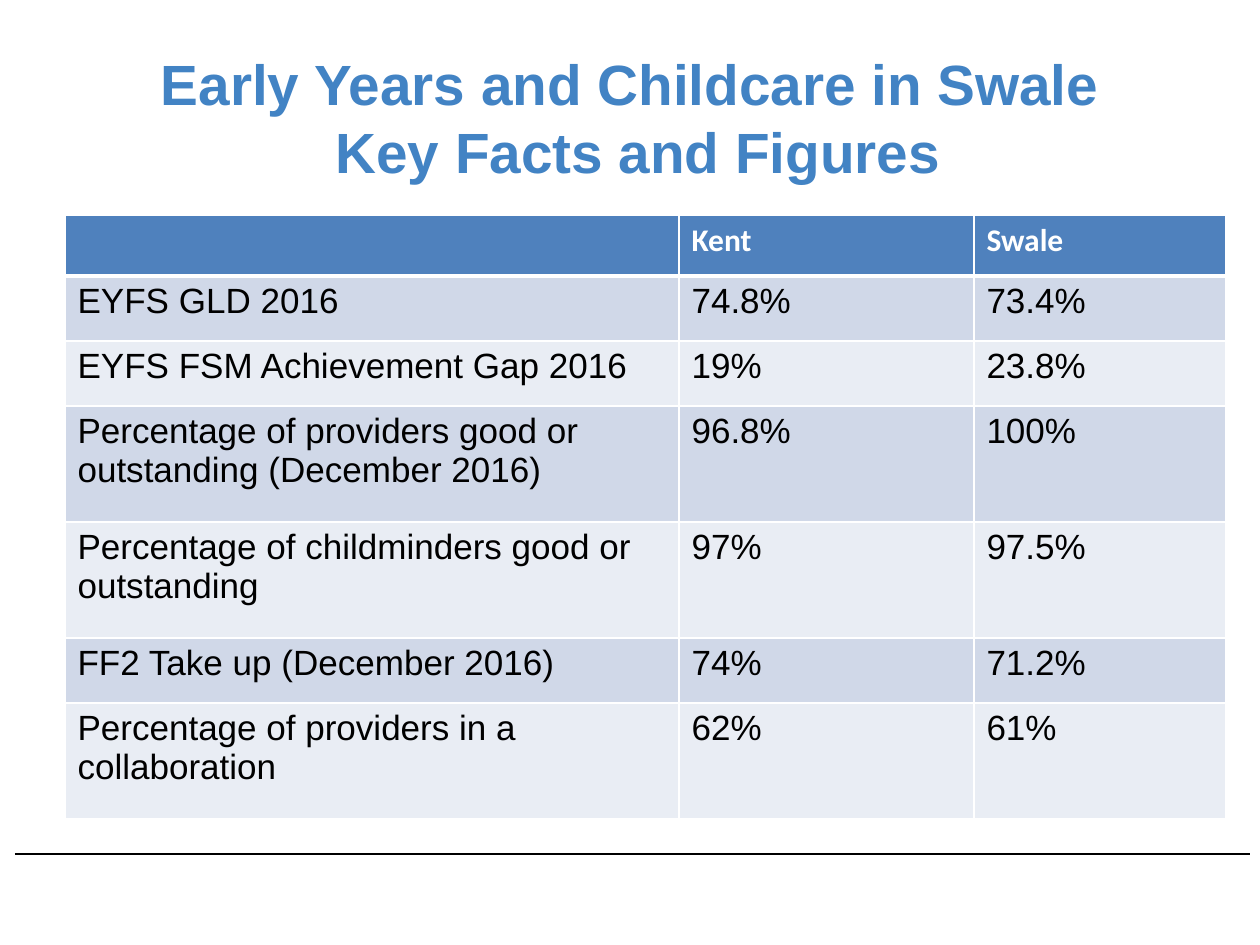
from lxml.etree import SubElement
from pptx import Presentation
from pptx.dml.color import RGBColor
from pptx.enum.shapes import MSO_CONNECTOR
from pptx.enum.text import MSO_ANCHOR, MSO_AUTO_SIZE, PP_ALIGN
from pptx.oxml.ns import qn
from pptx.util import Emu, Pt

SCALE = 914400 / 126  # EMU per px

BLACK = RGBColor(0x00, 0x00, 0x00)
WHITE = RGBColor(0xFF, 0xFF, 0xFF)
TITLE = RGBColor(0x42, 0x83, 0xC4)
HEADER = RGBColor(0x4F, 0x81, 0xBD)
BANDS = RGBColor(0xE9, 0xED, 0xF4), RGBColor(0xD0, 0xD8, 0xE8)

TITLE_FONT = {"name": "Arial", "size": Pt(32.4), "bold": True}
HEAD_FONT = {"name": "Calibri", "size": Pt(18), "bold": True}
BODY_FONT = {"name": "Arial", "size": Pt(20), "bold": False}

COLS = [614, 295, 252]
ROWS = [61, 65, 65, 116, 116, 65, 116]
FACTS = [
    ("", "Kent", "Swale"),
    ("EYFS GLD 2016", "74.8%", "73.4%"),
    ("EYFS FSM Achievement Gap 2016", "19%", "23.8%"),
    ("Percentage of providers good or outstanding (December 2016)", "96.8%", "100%"),
    ("Percentage of childminders good or outstanding", "97%", "97.5%"),
    ("FF2 Take up (December 2016)", "74%", "71.2%"),
    ("Percentage of providers in a collaboration", "62%", "61%"),
]


def px(num):
    return Emu(round(num * SCALE))


def style(para, font, color):
    for run in para.runs:
        for key, value in font.items():
            setattr(run.font, key, value)
        run.font.color.rgb = color


def add_title(slide, box):
    title = slide.shapes.title
    title.left, title.top, title.width, title.height = map(px, box)
    frame = title.text_frame
    frame.text = "Early Years and Childcare in Swale\v Key Facts and Figures"
    frame.auto_size = MSO_AUTO_SIZE.NONE
    frame.vertical_anchor = MSO_ANCHOR.MIDDLE
    para = frame.paragraphs[0]
    para.alignment = PP_ALIGN.CENTER
    style(para, TITLE_FONT, TITLE)
    # The line break takes the size of the text around it
    for brk in para._p.findall(qn("a:br")):
        SubElement(brk, qn("a:rPr"), sz="3240")


def add_borders(cell, widths):
    props = cell._tc.get_or_add_tcPr()
    for side, width in widths.items():
        line = SubElement(props, qn(f"a:ln{side}"), w=str(Pt(width)))
        fill = SubElement(line, qn("a:solidFill"))
        SubElement(fill, qn("a:srgbClr"), val=str(WHITE))


def add_facts(slide, box):
    left, top = box
    table = slide.shapes.add_table(
        len(ROWS), len(COLS), px(left), px(top), px(sum(COLS)), px(sum(ROWS))
    ).table
    for col, width in zip(table.columns, COLS):
        col.width = px(width)
    for row, height in zip(table.rows, ROWS):
        row.height = px(height)

    for i, texts in enumerate(FACTS):
        head = i == 0
        for j, text in enumerate(texts):
            cell = table.cell(i, j)
            # Thick rule between header and body
            add_borders(cell, {"L": 1, "R": 1, "T": 3 if i == 1 else 1, "B": 3 if head else 1})
            cell.fill.solid()
            cell.fill.fore_color.rgb = HEADER if head else BANDS[i % 2]
            cell.text = text
            style(cell.text_frame.paragraphs[0],
                  HEAD_FONT if head else BODY_FONT, WHITE if head else BLACK)


def add_rule(slide, box):
    left, top, width = box
    rule = slide.shapes.add_connector(
        MSO_CONNECTOR.STRAIGHT, px(left), px(top), px(left + width), px(top)
    )
    rule.line.color.rgb = BLACK
    rule.line.width = Pt(1)
    SubElement(rule._element.spPr, qn("a:effectLst"))


def main():
    deck = Presentation()
    deck.slide_width, deck.slide_height = px(1260), px(945)
    slide = deck.slides.add_slide(deck.slide_layouts[5])
    add_rule(slide, (15, 854, 1235))
    add_title(slide, (63, 38, 1134, 158))
    add_facts(slide, (65, 215))
    deck.save("out.pptx")


if __name__ == "__main__":
    main()
